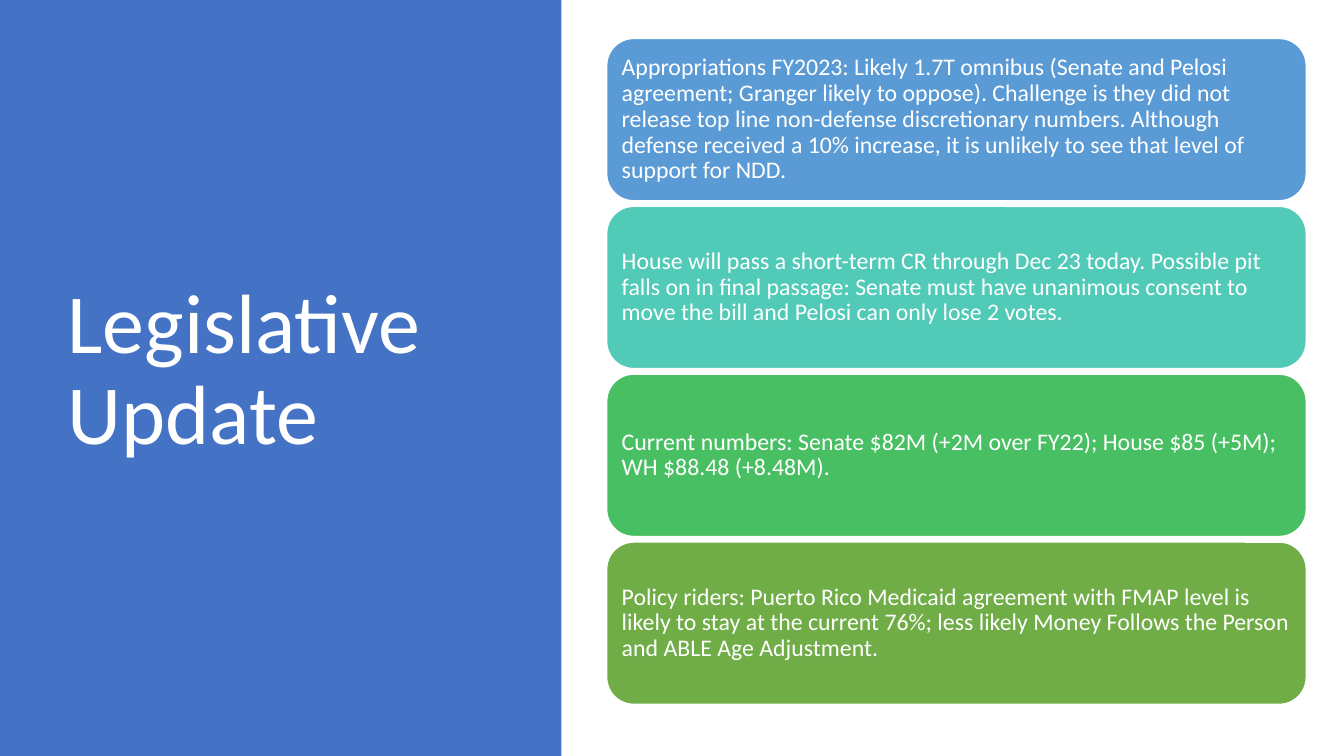
"""Build the Legislative Update slide."""
from dataclasses import dataclass

from pptx import Presentation
from pptx.dml.color import RGBColor
from pptx.enum.shapes import MSO_SHAPE
from pptx.enum.text import MSO_ANCHOR, PP_ALIGN
from pptx.util import Cm, Pt


@dataclass(frozen=True)
class Theme:
    font: str = "Calibri"
    white: RGBColor = RGBColor.from_string("FFFFFF")
    panel: RGBColor = RGBColor.from_string("4472C4")
    cards: tuple = tuple(map(RGBColor.from_string, ("5B9BD5", "52CAB8", "49BF64", "70AD47")))
    title_size: Pt = Pt(60)
    card_size: Pt = Pt(17)


THEME = Theme()
UPDATES = (
    "Appropriations FY2023: Likely 1.7T omnibus (Senate and Pelosi agreement; Granger likely "
    "to oppose). Challenge is they did not release top line non-defense discretionary numbers. "
    "Although defense received a 10% increase, it is unlikely to see that level of support for NDD.",
    "House will pass a short-term CR through Dec 23 today. Possible pit falls on in final passage: "
    "Senate must have unanimous consent to move the bill and Pelosi can only lose 2 votes.",
    "Current numbers: Senate $82M (+2M over FY22); House $85 (+5M); WH $88.48 (+8.48M).",
    "Policy riders: Puerto Rico Medicaid agreement with FMAP level is likely to stay at the "
    "current 76%; less likely Money Follows the Person and ABLE Age Adjustment.",
)
CARD_LEFT, CARD_TOP = Cm(15.29), Cm(0.97)
CARD_WIDTH, CARD_HEIGHT, CARD_PITCH = Cm(17.63), Cm(4.09), Cm(4.23)


def write_text(shape, text, size):
    frame = shape.text_frame
    frame.word_wrap = True
    frame.vertical_anchor = MSO_ANCHOR.MIDDLE
    frame.text = text
    paragraph = frame.paragraphs[0]
    paragraph.alignment = PP_ALIGN.LEFT
    paragraph.line_spacing = 0.9
    paragraph.font.name = THEME.font
    paragraph.font.size = size
    paragraph.font.color.rgb = THEME.white


def add_block(page, kind, left, top, width, height, colour):
    block = page.shapes.add_shape(kind, left, top, width, height)
    block.shadow.inherit = False
    block.fill.solid()
    block.fill.fore_color.rgb = colour
    block.line.fill.background()
    return block


def add_title_panel(page, height):
    panel = add_block(page, MSO_SHAPE.RECTANGLE, 0, 0, Cm(14.15), height, THEME.panel)
    title = page.shapes.title
    title.left, title.top, title.width, title.height = Cm(1.45), Cm(1.73), Cm(10.57), Cm(15.29)
    write_text(title, "Legislative Update", THEME.title_size)
    panel.element.addnext(title.element)


def add_card(page, top, text, colour):
    card = add_block(page, MSO_SHAPE.ROUNDED_RECTANGLE, CARD_LEFT, top,
                     CARD_WIDTH, CARD_HEIGHT, colour)
    card.line.color.rgb = THEME.white
    card.line.width = Pt(1)
    frame = card.text_frame
    frame.margin_left = frame.margin_right = frame.margin_top = frame.margin_bottom = Cm(0.18)
    write_text(card, text, THEME.card_size)


def main():
    deck = Presentation()
    deck.slide_width, deck.slide_height = Cm(33.87), Cm(19.05)
    page = deck.slides.add_slide(deck.slide_layouts.get_by_name("Title Only"))
    add_title_panel(page, deck.slide_height)
    for index, (text, colour) in enumerate(zip(UPDATES, THEME.cards)):
        add_card(page, CARD_TOP + index * CARD_PITCH, text, colour)
    deck.save("out.pptx")


if __name__ == "__main__":
    main()
